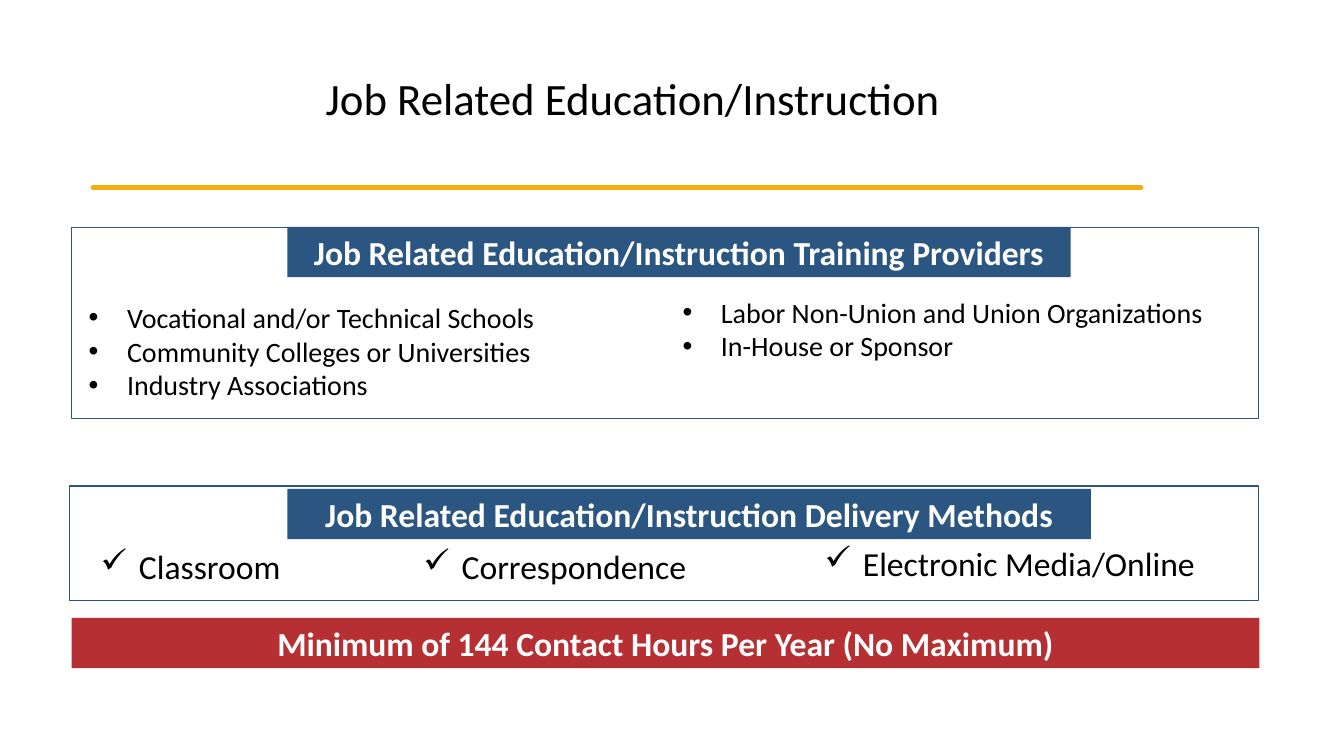
import lxml.etree
import pptx
import pptx.dml.color
import pptx.enum.shapes
import pptx.enum.text
import pptx.oxml.ns
import pptx.util
from pptx.util import Inches

COLORS = {"navy": "2A5681", "red": "B52F33", "gold": "EEB111",
          "white": "FFFFFF", "black": "000000"}
FONT = "Calibri"
INDENT = 0.38

# Content: places are (left, top, width, height) in inches
TITLE = ("Job Related Education/Instruction", (3.13, 0.28, 8.09, 1.45))
RULE = (0.92, 1.86, 11.32)
FRAMES = [(0.71, 2.26, 11.77, 1.89), (0.69, 4.82, 11.79, 1.14)]
BARS = [
    ("Minimum of 144 Contact Hours Per Year (No Maximum)", "red", (0.71, 6.13, 11.78, 0.5)),
    ("Job Related Education/Instruction Training Providers", "navy", (2.85, 2.25, 7.77, 0.5)),
    ("Job Related Education/Instruction Delivery Methods", "navy", (2.85, 4.85, 7.97, 0.5)),
]
PROVIDERS = [
    (["Vocational and/or Technical Schools", "Community Colleges or Universities",
      "Industry Associations"], (0.78, 2.93, 5.98, 1.51)),
    (["Labor Non-Union and Union Organizations", "In-House or Sponsor"],
     (6.67, 2.88, 6.06, 0.77)),
]
METHODS = [
    ("Classroom", (0.9, 5.37, 2.23, 0.5)),
    ("Correspondence", (4.1, 5.37, 3.02, 0.5)),
    ("Electronic Media/Online", (8.08, 5.34, 4.27, 0.5)),
]


def color(name):
    return pptx.dml.color.RGBColor.from_string(COLORS[name])


def add_child(parent, tag, **attributes):
    return lxml.etree.SubElement(parent, pptx.oxml.ns.qn(tag), attributes)


def place(shape, area):
    shape.left, shape.top, shape.width, shape.height = map(Inches, area)


def write(shape, lines, size=24, ink="black", bold=False, align="LEFT",
          anchor="TOP", bullet=None, bullet_font=None, spacing=1.0):
    frame = shape.text_frame
    frame.word_wrap = True
    frame.auto_size = pptx.enum.text.MSO_AUTO_SIZE.NONE
    frame.vertical_anchor = pptx.enum.text.MSO_ANCHOR[anchor]
    for number, line in enumerate(lines):
        para = frame.add_paragraph() if number else frame.paragraphs[0]
        para.alignment = pptx.enum.text.PP_ALIGN[align]
        para.line_spacing = spacing
        para.space_before = pptx.util.Pt(0)
        if bullet:
            properties = para._p.get_or_add_pPr()
            properties.set("marL", str(Inches(INDENT)))
            properties.set("indent", str(-Inches(INDENT)))
            if bullet_font:
                add_child(properties, "a:buFont", typeface=bullet_font)
            add_child(properties, "a:buChar", char=bullet)
        span = para.add_run()
        span.text = line
        span.font.name = FONT
        span.font.size = pptx.util.Pt(size)
        span.font.bold = bold
        span.font.color.rgb = color(ink)


def add_box(page, area, fill, line=None):
    box = page.shapes.add_shape(pptx.enum.shapes.MSO_SHAPE.RECTANGLE, *map(Inches, area))
    box.shadow.inherit = False
    box.fill.solid()
    box.fill.fore_color.rgb = color(fill)
    if line:
        box.line.color.rgb = color(line)
        box.line.width = pptx.util.Pt(1)
    else:
        box.line.fill.background()
    return box


def main():
    deck = pptx.Presentation()
    deck.slide_width, deck.slide_height = Inches(13.33), Inches(7.5)
    page = deck.slides.add_slide(deck.slide_layouts.get_by_name("Two Content"))

    # Title and gold rule
    title, area = TITLE
    place(page.shapes.title, area)
    write(page.shapes.title, [title], size=32, anchor="MIDDLE", spacing=0.9)
    left, top, right = RULE
    rule = page.shapes.add_connector(pptx.enum.shapes.MSO_CONNECTOR.STRAIGHT,
                                     *map(Inches, (left, top, right, top)))
    rule.line.color.rgb = color("gold")
    rule.line.width = pptx.util.Pt(3)
    rule.line._get_or_add_ln().set("cap", "rnd")
    add_child(rule._element.spPr, "a:effectLst")

    # Translucent frames, then the bars on them
    for area in FRAMES:
        frame = add_box(page, area, "white", line="navy")
        shade = frame._element.spPr.find(".//" + pptx.oxml.ns.qn("a:srgbClr"))
        add_child(shade, "a:alpha", val="85000")
    for text, fill, area in BARS:
        write(add_box(page, area, fill), [text], ink="white", bold=True, align="CENTER")

    # Provider lists, raised above their frame
    bodies = [holder for holder in page.placeholders if holder.placeholder_format.idx in (1, 2)]
    for body, (lines, area) in zip(bodies, PROVIDERS):
        place(body, area)
        write(body, lines, size=20, bullet="•", bullet_font="Arial")
        body.element.getparent().append(body.element)

    # Delivery methods
    for text, area in METHODS:
        write(page.shapes.add_textbox(*map(Inches, area)), [text], bullet="✓")

    deck.save("out.pptx")


if __name__ == "__main__":
    main()
